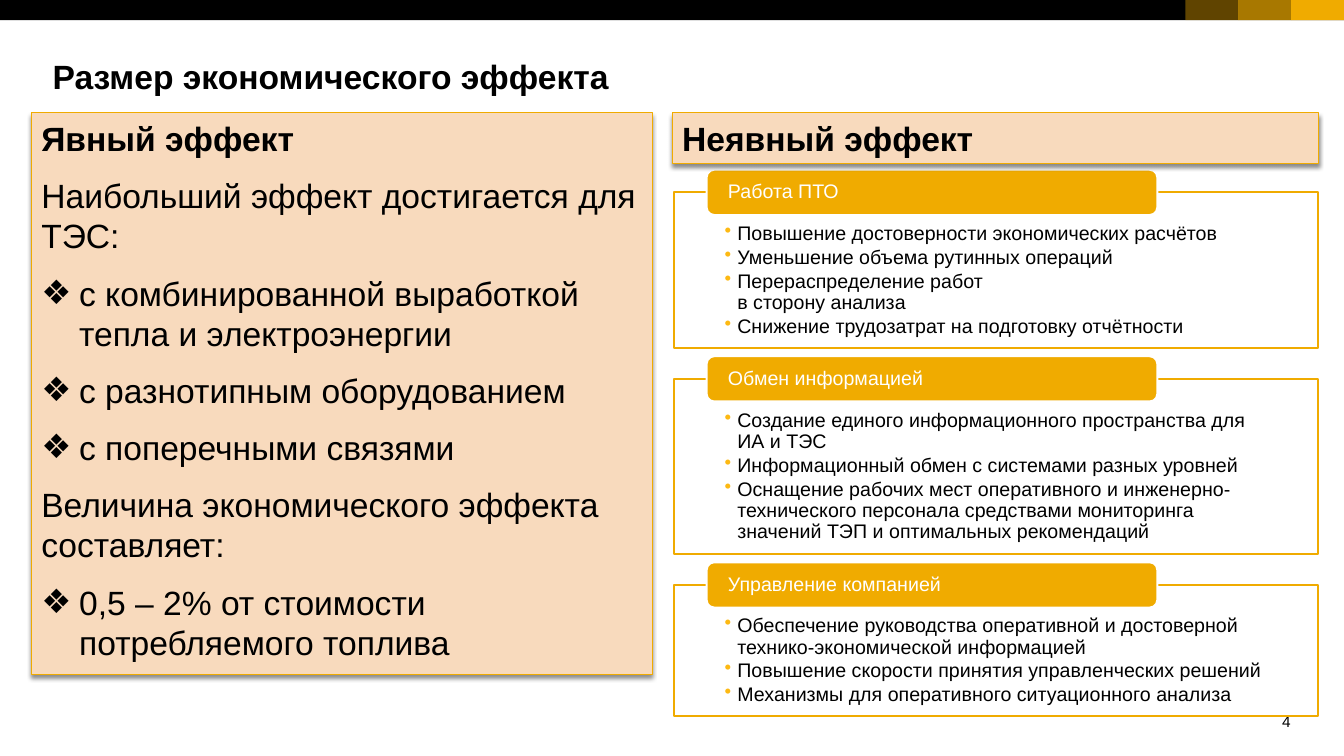
from lxml import etree
from pptx import Presentation
from pptx.dml.color import RGBColor
from pptx.enum import shapes, text
from pptx.oxml import ns
from pptx.util import Pt

BLACK = RGBColor(0x00, 0x00, 0x00)
WHITE = RGBColor(0xFF, 0xFF, 0xFF)
GOLD = RGBColor(0xF0, 0xAB, 0x00)
PEACH = RGBColor(0xF8, 0xDA, 0xBD)
AMBER = RGBColor(0xFD, 0xB9, 0x13)
KIND = shapes.MSO_SHAPE
ALIGN = text.PP_ALIGN
ANCHOR = text.MSO_ANCHOR

CARDS = [
    ("Работа ПТО", 111, [
        "Повышение достоверности экономических расчётов",
        "Уменьшение объема рутинных операций",
        "Перераспределение работ\nв сторону анализа",
        "Снижение трудозатрат на подготовку отчётности"]),
    ("Обмен информацией", 125, [
        "Создание единого информационного пространства для ИА и ТЭС",
        "Информационный обмен с системами разных уровней",
        "Оснащение рабочих мест оперативного и инженерно-технического "
        "персонала средствами мониторинга значений ТЭП и оптимальных "
        "рекомендаций"]),
    ("Управление компанией", 93.6, [
        "Обеспечение руководства оперативной и достоверной "
        "технико-экономической информацией",
        "Повышение скорости принятия управленческих решений",
        "Механизмы для оперативного ситуационного анализа"]),
]
EFFECT = [
    ("Явный эффект", True, None),
    ("Наибольший эффект достигается для ТЭС:", False, None),
    ("с комбинированной выработкой тепла и электроэнергии", False, "❖"),
    ("с разнотипным оборудованием", False, "❖"),
    ("с поперечными связями", False, "❖"),
    ("Величина экономического эффекта составляет:", False, None),
    ("0,5 – 2% от стоимости потребляемого топлива", False, "❖"),
]


def node(parent, tag, **attrs):
    return etree.SubElement(parent, ns.qn("a:" + tag), attrs)


def place(shape, left, top, width, height):
    shape.left, shape.top = Pt(left), Pt(top)
    shape.width, shape.height = Pt(width), Pt(height)


def fade(shape, percent):
    color = shape.element.spPr.find(".//" + ns.qn("a:srgbClr"))
    node(color, "alpha", val=str(percent * 1000))


def block(slide, kind, box, fill):
    shape = slide.shapes.add_shape(kind, *map(Pt, box))
    shape.shadow.inherit = False
    shape.fill.solid()
    shape.fill.fore_color.rgb = fill
    shape.line.fill.background()
    return shape


def edge(shape, color, width):
    shape.line.color.rgb = color
    shape.line.width = Pt(width)


def inset(shape, left, top, right, bottom, anchor):
    frame = shape.text_frame
    frame.word_wrap = True
    frame.auto_size = text.MSO_AUTO_SIZE.NONE
    frame.vertical_anchor = anchor
    frame.margin_left, frame.margin_top = Pt(left), Pt(top)
    frame.margin_right, frame.margin_bottom = Pt(right), Pt(bottom)


def write(para, words, size, color=BLACK, bold=False, mark=None, hang=0,
          tint=None, after=0, lead=1.0, align=ALIGN.LEFT):
    props = para._p.get_or_add_pPr()
    props.set("marL", str(Pt(hang)))
    props.set("indent", str(-Pt(hang)))
    if tint is not None:
        node(node(props, "buClr"), "srgbClr", val=str(tint))
    if mark:
        node(props, "buChar", char=mark)
    else:
        node(props, "buNone")
    para.alignment = align
    para.line_spacing = lead
    para.space_before = Pt(0)
    para.space_after = Pt(after)
    for i, line in enumerate(words.split("\n")):
        if i:
            para.add_line_break()
        run = para.add_run()
        run.text = line
        font = run.font
        font.name, font.size, font.bold = "Arial", Pt(size), bold
        font.color.rgb = color


def lines(shape, count):
    frame = shape.text_frame
    return [frame.paragraphs[0]] + [frame.add_paragraph()
                                    for _ in range(count - 1)]


def panel(shape, items):
    shape.fill.solid()
    shape.fill.fore_color.rgb = PEACH
    edge(shape, GOLD, 0.79)
    shape.shadow.inherit = False
    effects = shape.element.spPr.find(ns.qn("a:effectLst"))
    cast = node(effects, "outerShdw", blurRad=str(Pt(3)), dist=str(Pt(2.4)),
                dir="5400000", algn="t", rotWithShape="0")
    node(node(cast, "srgbClr", val=str(BLACK)), "alpha", val="45000")
    inset(shape, 7.2, 3.6, 7.2, 3.6, ANCHOR.TOP)
    for para, (words, bold, mark) in zip(lines(shape, len(items)), items):
        write(para, words, 24, bold=bold, mark=mark,
              hang=27 if mark else 0, after=12)


def banner(slide, left, top, width, height):
    block(slide, KIND.RECTANGLE, (left, top, width, height), BLACK)
    step = 37.75
    for i, alpha in enumerate((100, 70, 40), 1):
        box = (left + width - i * step, top, step, height)
        fade(block(slide, KIND.RECTANGLE, box, GOLD), alpha)


def number(slide, left, top, width, height):
    box = slide.shapes.add_textbox(*map(Pt, (left, top, width, height)))
    inset(box, 0, 0, 0, 0, ANCHOR.TOP)
    write(box.text_frame.paragraphs[0], "4", 11, align=ALIGN.RIGHT)


def heading(slide, left, top, width, height):
    title = slide.shapes.title
    place(title, left, top, width, height)
    inset(title, 0, 0, 0, 0, ANCHOR.TOP)
    write(title.text_frame.paragraphs[0], "Размер экономического эффекта",
          24, bold=True)


def card(slide, name, points, left, top, width, height):
    body = block(slide, KIND.RECTANGLE, (left, top, width, height), WHITE)
    fade(body, 90)
    edge(body, GOLD, 1.5)
    inset(body, 36, 23, 36, 8, ANCHOR.MIDDLE)
    for para, words in zip(lines(body, len(points)), points):
        write(para, words, 14, mark="•", hang=9, tint=AMBER, after=1.9,
              lead=0.9)
    box = (left + 23, top - 16.2, width * 0.7, 32.4)
    tab = block(slide, KIND.ROUNDED_RECTANGLE, box, GOLD)
    edge(tab, WHITE, 1.5)
    inset(tab, 13.7, 1.5, 13.7, 1.5, ANCHOR.MIDDLE)
    write(tab.text_frame.paragraphs[0], name, 14, WHITE, lead=0.9)


def column(slide, left, top, width, gap):
    for name, height, points in CARDS:
        card(slide, name, points, left, top, width, height)
        top += height + gap


def main():
    deck = Presentation()
    deck.slide_width, deck.slide_height = Pt(960), Pt(540)
    slide = deck.slides.add_slide(deck.slide_layouts[1])
    number(slide, 895, 509, 27, 13.7)
    banner(slide, 0, 0, 960, 14.4)
    heading(slide, 37.6, 39.8, 884, 29)
    body = slide.placeholders[1]
    place(body, 22.3, 80.6, 443.5, 401)
    panel(body, EFFECT)
    column(slide, 481.7, 137.4, 460, 22.2)
    box = (480.2, 80.6, 461.8, 36)
    panel(block(slide, KIND.RECTANGLE, box, PEACH),
          [("Неявный эффект", True, None)])
    deck.save("out.pptx")


if __name__ == "__main__":
    main()
